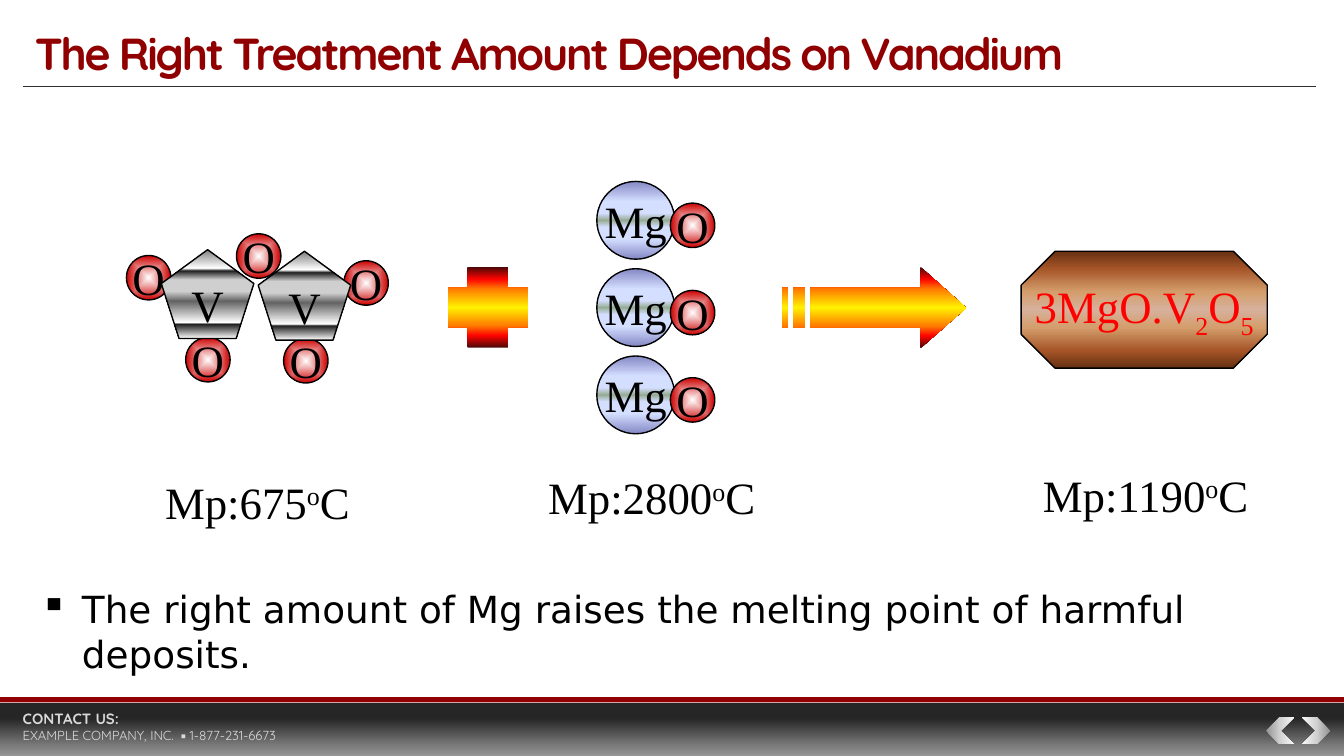
from dataclasses import dataclass

import pptx
import pptx.dml.color
import pptx.enum.shapes
import pptx.enum.text
import pptx.oxml
import pptx.oxml.ns
import pptx.util
from lxml import etree
from pptx.dml.color import RGBColor
from pptx.enum.shapes import MSO_SHAPE
from pptx.util import Cm

BLACK = RGBColor(0x00, 0x00, 0x00)
MAROON = RGBColor(0x90, 0x00, 0x00)
RED = RGBColor(0xFF, 0x00, 0x00)
RULE_GRAY = RGBColor(0x2C, 0x2F, 0x31)
LIGHT_GRAY = RGBColor(0xD9, 0xD9, 0xD9)

SERIF = "Times New Roman"
BRAND_FONT = "Quicksand"
ALIGN = pptx.enum.text.PP_ALIGN
ANCHOR = pptx.enum.text.MSO_ANCHOR
qn = pptx.oxml.ns.qn


@dataclass(frozen=True)
class Gradient:
    stops: tuple[tuple[int, str], ...]
    angle: int | None = 90  # None spreads from the centre


@dataclass(frozen=True)
class Atom:
    symbol: str
    preset: MSO_SHAPE
    width: float
    height: float
    gradient: Gradient


@dataclass(frozen=True)
class Label:
    text: str
    left: float
    top: float
    width: float


FOOTER = Gradient(((30, "262626"), (83, "7E7E7E"), (100, "969696")))
SILVER = Gradient(((0, "939393"), (50, "D1D1D1"), (100, "F8F8F8")), 180)
RED_BALL = Gradient(((0, "FFFFFF"), (100, "CC0000")), None)
CHROME = Gradient(((0, "7F7F7F"), (21, "FFFFFF"), (24, "1F1F1F"),
                   (34, "CFCFCF"), (47, "CFCFCF"), (58, "636363"),
                   (82, "FFFFFF"), (84, "1F1F1F"), (100, "FFFFFF")))
BLUE = Gradient(((0, "8488C4"), (26, "D4DEFF"), (41, "D4DEFF"), (50, "96AB94"),
                 (59, "D4DEFF"), (74, "D4DEFF"), (100, "8488C4")))
FIRE = Gradient(((0, "4D0808"), (15, "FF0300"), (27, "FF7A00"), (50, "FFF200"),
                 (73, "FF7A00"), (85, "FF0300"), (100, "4D0808")))
COPPER = Gradient(((0, "663012"), (15, "A65528"), (35, "D49E6C"), (50, "D6B19C"),
                   (65, "D49E6C"), (85, "A65528"), (100, "663012")))

OXYGEN = Atom("O", MSO_SHAPE.OVAL, 0.84, 0.84, RED_BALL)
VANADIUM = Atom("V", MSO_SHAPE.REGULAR_PENTAGON, 1.75, 1.68, CHROME)
MAGNESIUM = Atom("Mg", MSO_SHAPE.OVAL, 1.47, 1.47, BLUE)


def write_text(paragraph, *parts: str, size: float, font: str = SERIF,
               color: RGBColor = BLACK, bold: bool = False,
               align=ALIGN.LEFT, spacing: int | None = None) -> None:
    """Add runs; a leading ^ raises a part and a leading _ lowers it."""
    paragraph.alignment = align
    baselines = {"^": "30000", "_": "-25000"}
    for part in parts:
        run = paragraph.add_run()
        run.text = part.lstrip("^_")
        run.font.size = pptx.util.Pt(size)
        run.font.name = font
        run.font.bold = bold
        run.font.color.rgb = color
        properties = run.font._element
        if part[0] in baselines:
            properties.set("baseline", baselines[part[0]])
        if spacing is not None:
            properties.set("spc", str(spacing))


def paint(shape, gradient: Gradient) -> None:
    shape.fill.gradient()
    fill = shape._element.spPr.find(qn("a:gradFill"))
    for child in list(fill):
        fill.remove(child)
    stops = etree.SubElement(fill, qn("a:gsLst"))
    for position, color in gradient.stops:
        stop = etree.SubElement(stops, qn("a:gs"), pos=str(position * 1000))
        etree.SubElement(stop, qn("a:srgbClr"), val=color)
    if gradient.angle is None:
        shade = etree.SubElement(fill, qn("a:path"), path="shape")
        etree.SubElement(shade, qn("a:fillToRect"),
                         dict.fromkeys("ltrb", "50000"))
    else:
        etree.SubElement(fill, qn("a:lin"), ang=str(gradient.angle * 60000),
                         scaled="0")


def finish(shape, fill: Gradient | RGBColor, outlined: bool) -> None:
    shape.shadow.inherit = False
    if isinstance(fill, Gradient):
        paint(shape, fill)
    else:
        shape.fill.solid()
        shape.fill.fore_color.rgb = fill
    if outlined:
        shape.line.color.rgb = BLACK
        shape.line.width = pptx.util.Pt(0.75)
    else:
        shape.line.fill.background()


def add_preset(slide, preset: MSO_SHAPE, left: float, top: float, width: float,
               height: float, fill: Gradient | RGBColor, outlined: bool = False):
    shape = slide.shapes.add_shape(preset, Cm(left), Cm(top), Cm(width), Cm(height))
    finish(shape, fill, outlined)
    shape.text_frame.word_wrap = False
    shape.text_frame.vertical_anchor = ANCHOR.MIDDLE
    return shape


def add_atom(slide, atom: Atom, left: float, top: float) -> None:
    shape = add_preset(slide, atom.preset, left, top, atom.width, atom.height,
                       atom.gradient, outlined=True)
    write_text(shape.text_frame.paragraphs[0], atom.symbol, size=24,
               align=ALIGN.CENTER)


def add_box(slide, left: float, top: float, width: float, height: float,
            wrap: bool = True, anchor=ANCHOR.TOP):
    frame = slide.shapes.add_textbox(Cm(left), Cm(top), Cm(width),
                                     Cm(height)).text_frame
    frame.word_wrap = wrap
    frame.vertical_anchor = anchor
    return frame


def add_striped_arrow(slide) -> None:
    top, bottom = 5.44, 6.2
    outlines = [[(17.4, 5.05), (17.4, top), (15.32, top), (15.32, bottom),
                 (17.4, bottom), (17.4, 6.58), (18.26, 5.82)]]
    for left, right in ((14.99, 15.21), (14.78, 14.88)):
        outlines.append([(left, top), (left, bottom), (right, bottom), (right, top)])
    builder = None
    for outline in outlines:
        start, *others = [(Cm(x), Cm(y)) for x, y in outline]
        if builder is None:
            builder = slide.shapes.build_freeform(*start)
        else:
            builder.move_to(*start)
        builder.add_line_segments(others, close=True)
    finish(builder.convert_to_shape(), FIRE, outlined=False)


def add_frame(slide) -> None:
    # Footer bands and navigation chevrons
    add_preset(slide, MSO_SHAPE.RECTANGLE, 0, 13.18, 25.4, 0.1, MAROON)
    add_preset(slide, MSO_SHAPE.RECTANGLE, 0, 13.28, 25.4, 1.01, FOOTER)
    add_preset(slide, MSO_SHAPE.CHEVRON, 24.61, 13.56, 0.53, 0.51, SILVER)
    back = add_preset(slide, MSO_SHAPE.CHEVRON, 23.93, 13.56, 0.53, 0.51, SILVER)
    back._element.spPr.find(qn("a:xfrm")).set("flipH", "1")
    contact = add_box(slide, 0.18, 13.26, 8.69, 0.91, anchor=ANCHOR.BOTTOM)
    write_text(contact.paragraphs[0], "CONTACT US:", size=8, font=BRAND_FONT,
               color=LIGHT_GRAY, bold=True)
    write_text(contact.add_paragraph(), "EXAMPLE COMPANY, INC.  ▪ 1-877-231-6673",
               size=7, font=BRAND_FONT, color=LIGHT_GRAY)

    # Title and its rule
    title = add_box(slide, 0.41, 0.3, 24.46, 1.3, anchor=ANCHOR.BOTTOM)
    title.margin_top = title.margin_bottom = Cm(0.1)
    write_text(title.paragraphs[0], "The Right Treatment Amount Depends on Vanadium",
               size=24, font=BRAND_FONT, color=MAROON, bold=True, spacing=-120)
    rule = slide.shapes.add_connector(pptx.enum.shapes.MSO_CONNECTOR.STRAIGHT,
                                      Cm(0.43), Cm(1.63), Cm(24.87), Cm(1.63))
    rule.line.color.rgb = RULE_GRAY
    rule.line.width = pptx.util.Pt(0.75)
    etree.SubElement(rule._element.spPr, qn("a:effectLst"))


def add_reaction(slide) -> None:
    # Vanadium pentoxide
    for left, top in ((5.36, 6.4), (6.5, 4.93), (2.39, 4.83), (4.47, 4.42),
                      (3.51, 6.38)):
        add_atom(slide, OXYGEN, left, top)
    for left, top in ((4.88, 4.75), (3.05, 4.72)):
        add_atom(slide, VANADIUM, left, top)

    # Three magnesium oxides
    for row in range(3):
        top = 3.43 + 1.65 * row
        add_atom(slide, MAGNESIUM, 11.28, top)
        add_atom(slide, OXYGEN, 12.67, top + 0.41)

    # Plus sign, arrow and product
    add_preset(slide, MSO_SHAPE.CROSS, 8.46, 5.05, 1.52, 1.52, FIRE)
    add_striped_arrow(slide)
    product = add_preset(slide, MSO_SHAPE.OCTAGON, 19.3, 4.75, 4.65, 2.21, COPPER,
                         outlined=True)
    product.adjustments[0] = 0.29
    write_text(product.text_frame.paragraphs[0], "3MgO.V", "_2", "O", "_5",
               size=24, color=RED, align=ALIGN.CENTER)

    # Melting points
    for label in (Label("Mp:675", 2.87, 8.84, 4.04), Label("Mp:2800", 10.11, 8.76, 4.47),
                  Label("Mp:1190", 19.46, 8.71, 4.47)):
        frame = add_box(slide, label.left, label.top, label.width, 1.27, wrap=False)
        write_text(frame.paragraphs[0], label.text, "^o", "C", size=24)


def add_conclusion(slide) -> None:
    paragraph = add_box(slide, 0.51, 10.95, 24.69, 1.96).paragraphs[0]
    properties = paragraph._p.get_or_add_pPr()
    properties.set("marL", str(Cm(0.79)))
    properties.set("indent", str(-Cm(0.79)))
    etree.SubElement(properties, qn("a:buChar"), char="▪")
    write_text(paragraph, "The right amount of Mg raises the melting point of "
               "harmful deposits.", size=20, font="DejaVu Sans")


def main() -> None:
    presentation = pptx.Presentation()
    presentation.slide_width = Cm(25.4)
    presentation.slide_height = Cm(14.29)
    slide = presentation.slides.add_slide(presentation.slide_layouts[6])
    add_frame(slide)
    add_reaction(slide)
    add_conclusion(slide)
    presentation.save("out.pptx")


if __name__ == "__main__":
    main()
